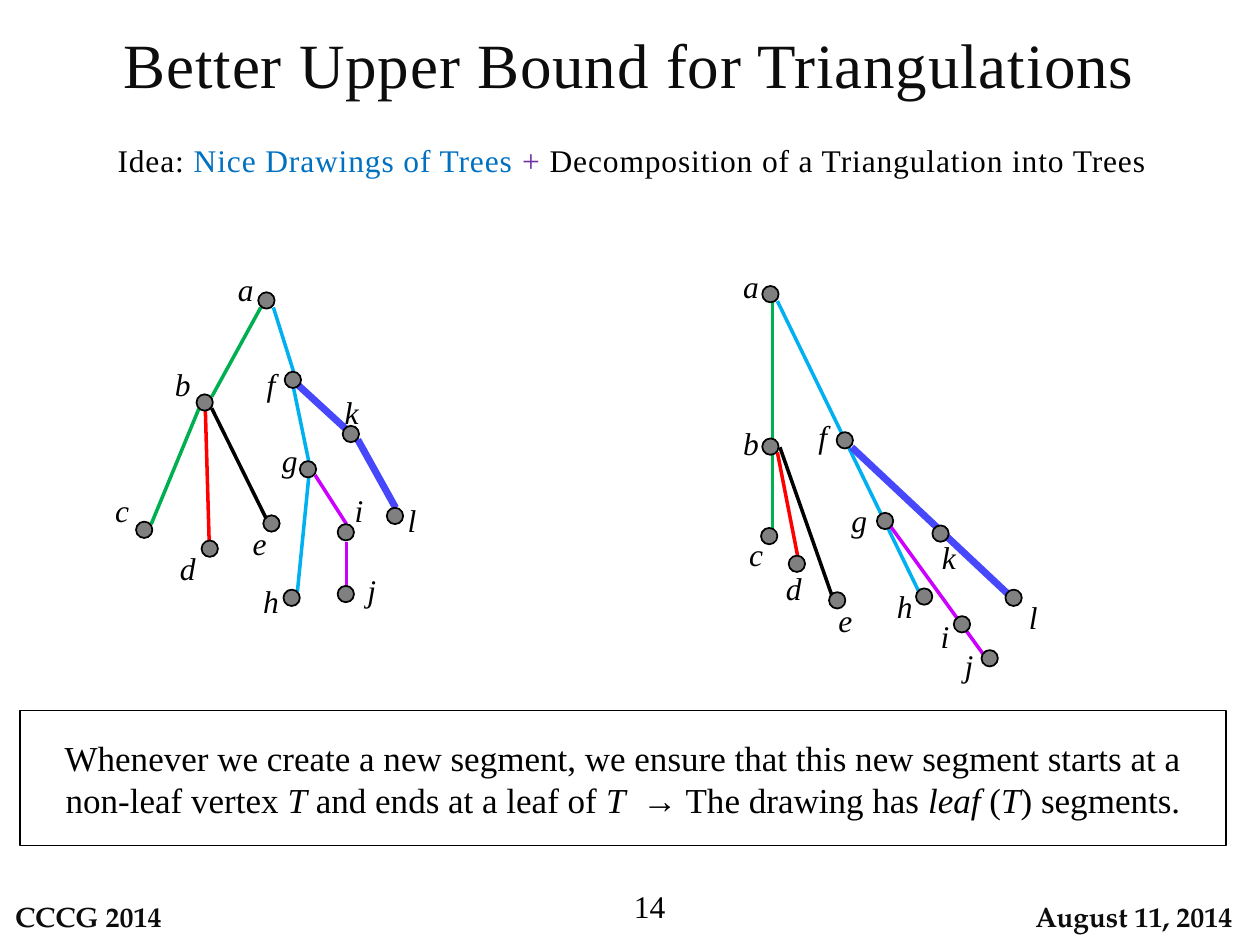
import dataclasses
import typing

import lxml.etree
import pptx
import pptx.dml.color
import pptx.enum.shapes
import pptx.enum.text
import pptx.oxml.ns
import pptx.util

INK = {
    "black": "000000", "soft": "0D0D0D", "gray": "808080", "green": "00B050",
    "red": "FF0000", "cyan": "00B0F0", "pink": "CC00FF", "blue": "4747FB",
    "idea": "0070C0", "plus": "7030A0",
}
FORM = pptx.enum.shapes.MSO_SHAPE
ALIGN = pptx.enum.text.PP_ALIGN
MID = pptx.enum.text.MSO_ANCHOR.MIDDLE
TOP = pptx.enum.text.MSO_ANCHOR.TOP
DOT = 0.13


class Run(typing.NamedTuple):
    text: str
    ink: str = "black"
    slant: bool = False


@dataclasses.dataclass
class Node:
    name: str
    x: float
    y: float
    left: float
    top: float


@dataclasses.dataclass
class Edge:
    ink: str
    x1: float
    y1: float
    x2: float
    y2: float
    width: float = 2


@dataclasses.dataclass
class Tree:
    nodes: list[Node]
    edges: list[Edge]


LEFT = Tree(
    [
        Node("a", 2.05, 2.32, 1.76, 2.17), Node("b", 1.56, 3.13, 1.26, 2.92),
        Node("c", 1.08, 4.14, 0.78, 3.95), Node("d", 1.6, 4.29, 1.3, 4.41),
        Node("e", 2.09, 4.09, 1.87, 4.21), Node("f", 2.26, 2.95, 1.96, 2.95),
        Node("g", 2.38, 3.66, 2.11, 3.55), Node("h", 2.25, 4.68, 1.96, 4.67),
        Node("i", 2.68, 4.16, 2.66, 3.95), Node("j", 2.68, 4.65, 2.76, 4.58),
        Node("k", 2.72, 3.38, 2.6, 3.17), Node("l", 3.07, 4.03, 3.08, 4.03),
    ],
    [
        Edge("green", 2.07, 2.44, 1.68, 3.15), Edge("green", 1.58, 3.24, 1.2, 4.16),
        Edge("red", 1.63, 3.26, 1.66, 4.29), Edge("black", 1.68, 3.24, 2.11, 4.11),
        Edge("cyan", 2.17, 2.44, 2.33, 2.95), Edge("cyan", 2.33, 3.08, 2.45, 3.66),
        Edge("cyan", 2.45, 3.79, 2.36, 4.7), Edge("pink", 2.5, 3.77, 2.75, 4.16),
        Edge("pink", 2.75, 4.3, 2.75, 4.65), Edge("blue", 2.37, 3.06, 2.74, 3.4, 4),
        Edge("blue", 2.84, 3.49, 3.14, 4.03, 4),
    ],
)
RIGHT = Tree(
    [
        Node("a", 6.05, 2.27, 5.77, 2.14), Node("b", 6.05, 3.48, 5.77, 3.39),
        Node("c", 6.04, 4.19, 5.81, 4.3), Node("d", 6.26, 4.41, 6.11, 4.57),
        Node("e", 6.58, 4.7, 6.52, 4.82), Node("f", 6.64, 3.43, 6.34, 3.36),
        Node("g", 6.96, 4.07, 6.63, 4.03), Node("h", 7.27, 4.67, 6.99, 4.71),
        Node("i", 7.57, 4.89, 7.31, 4.95), Node("j", 7.79, 5.16, 7.5, 5.18),
        Node("k", 7.4, 4.17, 7.34, 4.32), Node("l", 7.98, 4.68, 8.01, 4.8),
    ],
    [
        Edge("green", 6.13, 2.33, 6.13, 4.23), Edge("red", 6.17, 3.59, 6.34, 4.46),
        Edge("black", 6.19, 3.55, 6.6, 4.72), Edge("cyan", 6.17, 2.39, 7.29, 4.69),
        Edge("pink", 7.07, 4.18, 7.86, 5.27), Edge("blue", 6.76, 3.55, 8.07, 4.78, 4),
    ],
)


def span(*sizes: float) -> list[pptx.util.Cm]:
    """Turn inches into Cm lengths."""
    return [pptx.util.Cm(size * 2.54) for size in sizes]


def tint(ink: str) -> pptx.dml.color.RGBColor:
    """Look up a colour by name."""
    return pptx.dml.color.RGBColor.from_string(INK[ink])


def write(shape, runs: list[Run], *, size: float = 18, face: str = "Times New Roman",
          bold: bool = False, align=ALIGN.CENTER, anchor=MID, space: int = 0) -> None:
    """Fill a shape with formatted runs."""
    frame = shape.text_frame
    frame.word_wrap = True
    frame.vertical_anchor = anchor
    para = frame.paragraphs[0]
    para.alignment = align
    for text, ink, slant in runs:
        run = para.add_run()
        run.text = text
        font = run.font
        font.name, font.size = face, pptx.util.Pt(size)
        font.bold, font.italic = bold, slant
        font.color.rgb = tint(ink)
        if space:
            run._r.get_or_add_rPr().set("spc", str(space))


def label(slide, box: tuple, runs: list[Run], **style) -> None:
    """Add a text box."""
    write(slide.shapes.add_textbox(*span(*box)), runs, **style)


def block(slide, form, box: tuple, fill: str = "", width: float = 0):
    """Add a shape with an optional fill and outline."""
    shape = slide.shapes.add_shape(form, *span(*box))
    shape.shadow.inherit = False
    if fill:
        shape.fill.solid()
        shape.fill.fore_color.rgb = tint(fill)
    else:
        shape.fill.background()
    if width:
        shape.line.color.rgb = tint("black")
        shape.line.width = pptx.util.Pt(width)
    else:
        shape.line.fill.background()
    return shape


def link(slide, edge: Edge) -> None:
    """Draw one tree edge."""
    kind = pptx.enum.shapes.MSO_CONNECTOR.STRAIGHT
    line = slide.shapes.add_connector(kind, *span(edge.x1, edge.y1, edge.x2, edge.y2))
    line.line.color.rgb = tint(edge.ink)
    line.line.width = pptx.util.Pt(edge.width)
    lxml.etree.SubElement(line._element.spPr, pptx.oxml.ns.qn("a:effectLst"))


def plant(slide, tree: Tree) -> None:
    """Draw a tree with its edges, dots and names."""
    for edge in tree.edges:
        link(slide, edge)
    for node in tree.nodes:
        block(slide, FORM.OVAL, (node.x, node.y, DOT, DOT), "gray", 1)
        tall = 0.25 if node.name in "ab" else 0.2
        label(slide, (node.left, node.top, 0.38, tall), [Run(node.name, slant=True)])


def main() -> None:
    """Build the slide and save it."""
    deck = pptx.Presentation()
    deck.slide_width, deck.slide_height = span(10, 7.5)
    slide = deck.slides.add_slide(deck.slide_layouts[6])
    label(slide, (0, 0.15, 10, 1.04),
          [Run("Better Upper Bound for Triangulations", "soft")],
          size=36, anchor=TOP, space=50)
    label(slide, (0.66, 1.07, 8.78, 0.4),
          [Run("Idea: "), Run("Nice Drawings of Trees ", "idea"), Run("+ ", "plus"),
           Run("Decomposition of a Triangulation into Trees ")],
          anchor=TOP, space=50)
    for tree in (LEFT, RIGHT):
        plant(slide, tree)
    claim = block(slide, FORM.RECTANGLE, (0.16, 5.64, 9.57, 1.07), width=0.75)
    write(claim, [
        Run("Whenever we create a new segment, we ensure that this new segment "
            "starts at a non-leaf vertex "),
        Run("T", slant=True), Run(" and ends at a leaf of "), Run("T  ", slant=True),
        Run("→ The drawing has "), Run("leaf ", slant=True), Run("("),
        Run("T", slant=True), Run(") segments."),
    ], size=20)
    for text, left, wide, align in (("CCCG 2014", 0, 1.54, ALIGN.LEFT),
                                    ("August 11, 2014", 8, 2, ALIGN.CENTER)):
        foot = block(slide, FORM.ROUNDED_RECTANGLE, (left, 7.05, wide, 0.45))
        write(foot, [Run(text, "soft")], size=16, face="TeX Gyre Pagella",
              bold=True, align=align)
    label(slide, (3.05, 6.99, 2.33, 0.4), [Run("14")], align=ALIGN.RIGHT)
    deck.save("out.pptx")


if __name__ == "__main__":
    main()
